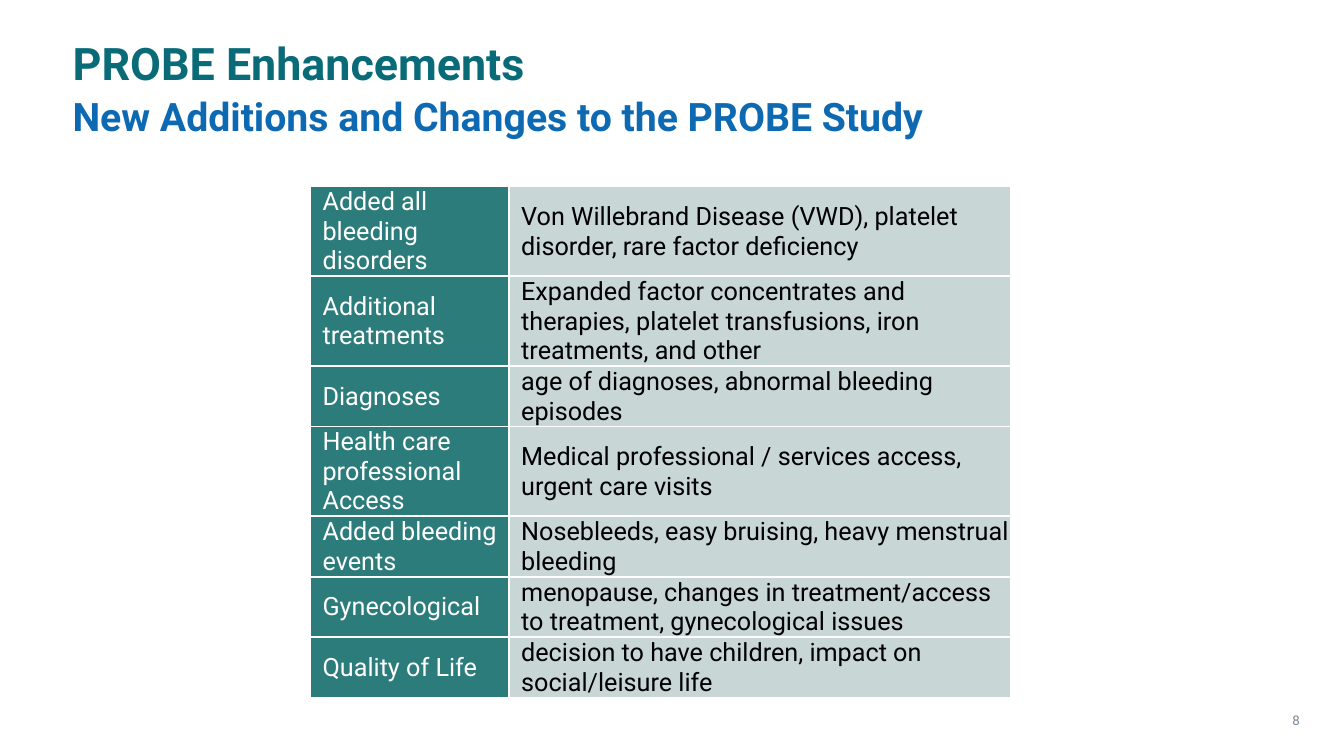
"""Build the PROBE enhancements slide."""
from lxml.etree import SubElement
from pptx import Presentation
from pptx.dml.color import RGBColor
from pptx.enum.text import MSO_ANCHOR, MSO_AUTO_SIZE, PP_ALIGN
from pptx.oxml.ns import qn
from pptx.util import Inches, Pt

TITLE = "PROBE Enhancements"
SUBTITLE = "New Additions and Changes to the PROBE Study"
NUMBER = "8"
ROWS = [
    ("Added all bleeding disorders",
     "Von Willebrand Disease (VWD), platelet disorder, rare factor deficiency", 3),
    ("Additional treatments",
     "Expanded factor concentrates and therapies, platelet transfusions, "
     "iron treatments, and other", 3),
    ("Diagnoses", "age of diagnoses, abnormal bleeding episodes", 2),
    ("Health care professional Access",
     "Medical professional / services access, urgent care visits", 3),
    ("Added bleeding events",
     "Nosebleeds, easy bruising, heavy menstrual bleeding", 2),
    ("Gynecological",
     "menopause, changes in treatment/access to treatment, gynecological issues", 2),
    ("Quality of Life",
     "decision to have children, impact on social/leisure life", 2),
]
HEIGHTS = {2: 0.6, 3: 0.89}
WIDTHS = (1.97, 4.97)

FONT = "Roboto"
WHITE = RGBColor(0xFF, 0xFF, 0xFF)
BLACK = RGBColor(0, 0, 0)
TEAL = RGBColor(0x0A, 0x6B, 0x78)
BLUE = RGBColor(0x0E, 0x69, 0xB3)
GRAY = RGBColor(0x7A, 0x87, 0x98)
DARK = RGBColor(0x2D, 0x7C, 0x7C)
PALE = RGBColor(0xC9, 0xD6, 0xD6)
STYLES = ((DARK, WHITE, "RTB"), (PALE, BLACK, "LTB"))


def write(frame, text, size, color, bold=False):
    """Add one left-aligned run to a text frame."""
    frame.word_wrap = True
    line = frame.paragraphs[0]
    line.alignment = PP_ALIGN.LEFT
    run = line.add_run()
    run.text = text
    font = run.font
    font.name, font.size, font.bold = FONT, Pt(size), bold
    font.color.rgb = color


def head(shape, top, height, text, size, color):
    """Place and fill a heading without margins."""
    shape.left, shape.top = Inches(0.72), Inches(top)
    shape.width, shape.height = Inches(8.8), Inches(height)
    frame = shape.text_frame
    frame.auto_size = MSO_AUTO_SIZE.NONE
    frame.vertical_anchor = MSO_ANCHOR.MIDDLE
    frame.margin_left = frame.margin_right = 0
    frame.margin_top = frame.margin_bottom = 0
    write(frame, text, size, color, True)


def border(cell, sides):
    """Draw white borders on the given sides of a cell."""
    props = cell._tc.get_or_add_tcPr()
    for side in sides:
        line = SubElement(props, qn(f"a:ln{side}"), w=str(Pt(1.5)))
        fill = SubElement(line, qn("a:solidFill"))
        SubElement(fill, qn("a:srgbClr"), val=str(WHITE))


def grid(slide):
    """Add the table of additions."""
    tall = [HEIGHTS[lines] for *_, lines in ROWS]
    table = slide.shapes.add_table(
        len(ROWS), len(WIDTHS), Inches(3.08), Inches(1.85),
        Inches(sum(WIDTHS)), Inches(sum(tall))).table
    table.first_row = table.horz_banding = False
    for column, width in zip(table.columns, WIDTHS):
        column.width = Inches(width)
    for i, (*texts, _) in enumerate(ROWS):
        table.rows[i].height = Inches(tall[i])
        last = i == len(ROWS) - 1
        for j, (text, (fill, color, sides)) in enumerate(zip(texts, STYLES)):
            cell = table.cell(i, j)
            border(cell, sides.replace("B", "") if last else sides)
            cell.fill.solid()
            cell.fill.fore_color.rgb = fill
            cell.vertical_anchor = MSO_ANCHOR.MIDDLE
            cell.margin_left = Inches(0.12)
            cell.margin_right = cell.margin_top = Inches(0.01)
            cell.margin_bottom = 0
            write(cell.text_frame, text, 18, color)


def main():
    """Build and save the slide."""
    deck = Presentation()
    deck.slide_width, deck.slide_height = Inches(13.33), Inches(7.5)
    slide = deck.slides.add_slide(deck.slide_layouts[5])
    head(slide.shapes.title, 0.42, 0.4, TITLE, 32, TEAL)
    label = slide.shapes.add_textbox(0, 0, 0, 0)
    head(label, 0.92, 0.46, SUBTITLE, 28, BLUE)
    grid(slide)
    page = slide.shapes.add_textbox(
        Inches(12.72), Inches(7.02), Inches(0.6), Inches(0.33))
    write(page.text_frame, NUMBER, 9.5, GRAY)
    deck.save("out.pptx")


if __name__ == "__main__":
    main()
